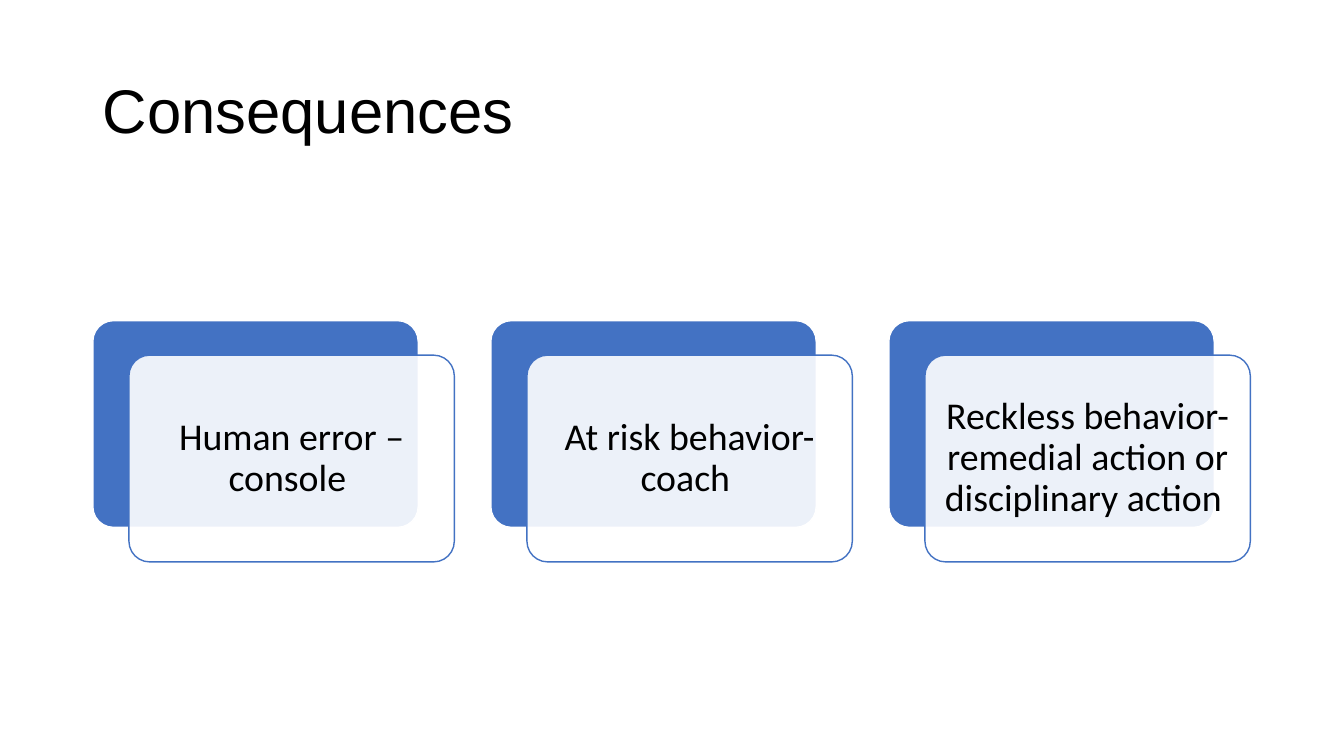
"""Build the Consequences slide: three behaviors, each with its response."""
from dataclasses import dataclass

from lxml.etree import SubElement
from pptx import Presentation
from pptx.dml.color import RGBColor
from pptx.enum.shapes import MSO_SHAPE as Shape
from pptx.enum.text import MSO_ANCHOR as Anchor, MSO_AUTO_SIZE as AutoSize, PP_ALIGN as Align
from pptx.oxml.ns import qn
from pptx.util import Cm, Pt


@dataclass(frozen=True)
class Theme:
    accent: RGBColor = RGBColor(0x43, 0x72, 0xC3)
    paper: RGBColor = RGBColor(0xFF, 0xFF, 0xFF)
    ink: RGBColor = RGBColor(0, 0, 0)
    title_font: str = "Arial"
    body_font: str = "Calibri"
    title_size: int = 44
    body_size: int = 27


def write(frame, text, *, font, size, color, align, inset_x, inset_y):
    frame.word_wrap = True
    frame.auto_size = AutoSize.NONE
    frame.vertical_anchor = Anchor.MIDDLE
    frame.margin_left = frame.margin_right = Cm(inset_x)
    frame.margin_top = frame.margin_bottom = Cm(inset_y)
    paragraph = frame.paragraphs[0]
    paragraph.alignment = align
    paragraph.line_spacing = 0.9
    run = paragraph.add_run()
    run.text = text
    run.font.name = font
    run.font.size = Pt(size)
    run.font.color.rgb = color


class SlideBuilder:
    def __init__(self, slide, theme):
        self.slide = slide
        self.theme = theme

    def title(self, text, left, top, width, height):
        heading = self.slide.shapes.title
        heading.left, heading.top = Cm(left), Cm(top)
        heading.width, heading.height = Cm(width), Cm(height)
        write(heading.text_frame, text, font=self.theme.title_font, size=self.theme.title_size,
              color=self.theme.ink, align=Align.LEFT, inset_x=0.25, inset_y=0.13)

    def panel(self, left, top, width, height, fill, line, opacity=100):
        panel = self.slide.shapes.add_shape(
            Shape.ROUNDED_RECTANGLE, Cm(left), Cm(top), Cm(width), Cm(height))
        panel.adjustments[0] = 0.1
        panel.shadow.inherit = False
        panel.fill.solid()
        panel.fill.fore_color.rgb = fill
        panel.line.color.rgb = line
        panel.line.width = Pt(1)
        if opacity < 100:
            tint = panel.fill._xPr.find(qn("a:solidFill"))[0]
            SubElement(tint, qn("a:alpha"), val=str(opacity * 1000))
        return panel

    def card(self, text, left, top, width=8.2, height=5.21):
        theme = self.theme
        self.panel(left, top, width, height, theme.accent, theme.paper)
        front = self.panel(left + 0.91, top + 0.87, width, height,
                           theme.paper, theme.accent, opacity=90)
        write(front.text_frame, text, font=theme.body_font, size=theme.body_size,
              color=theme.ink, align=Align.CENTER, inset_x=0.28, inset_y=0.28)


def main():
    deck = Presentation()
    deck.slide_width, deck.slide_height = Cm(33.87), Cm(19.05)
    title_only = deck.slide_layouts[5]
    builder = SlideBuilder(deck.slides.add_slide(title_only), Theme())
    margin, pitch = 2.34, 10.03
    builder.title("Consequences", margin, 1.02, 29.21, 3.68)
    responses = (
        "Human error – console ",
        "At risk behavior- coach ",
        "Reckless behavior- remedial action or disciplinary action ",
    )
    for column, response in enumerate(responses):
        builder.card(response, margin + column * pitch, 8.08)
    deck.save("out.pptx")


if __name__ == "__main__":
    main()
